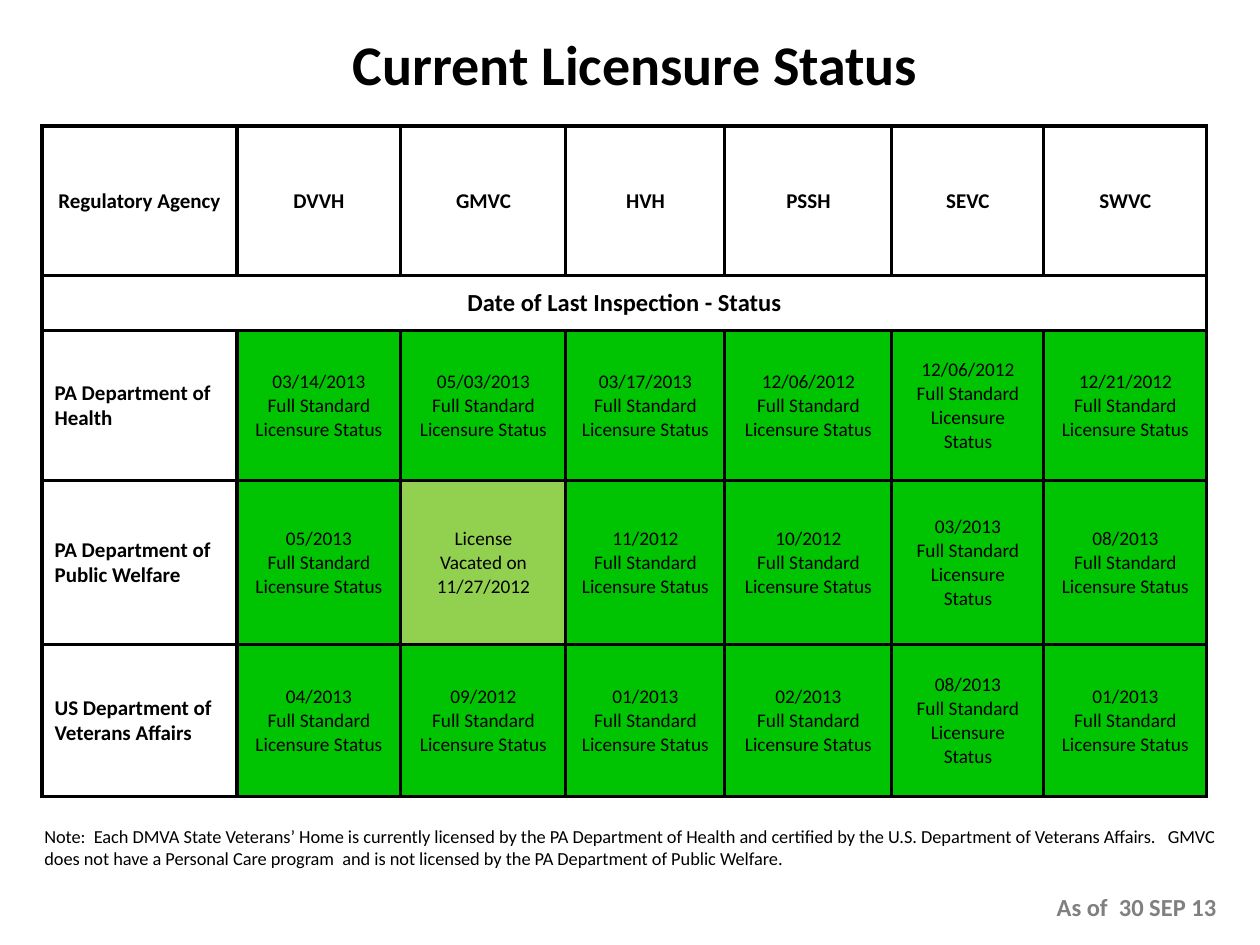
from lxml import etree
from pptx import Presentation
from pptx import util as u
from pptx.dml.color import RGBColor
from pptx.enum import text
from pptx.oxml.ns import qn

BLACK = RGBColor(0x00, 0x00, 0x00)
WHITE = RGBColor(0xFF, 0xFF, 0xFF)
GREY = RGBColor(0x80, 0x80, 0x80)
GREEN = RGBColor(0x00, 0xC3, 0x02)
LIME = RGBColor(0x92, 0xD0, 0x50)
LEFT, CENTER, RIGHT = text.PP_ALIGN.LEFT, text.PP_ALIGN.CENTER, text.PP_ALIGN.RIGHT

PX_PER_INCH = 126
HOMES = ["DVVH", "GMVC", "HVH", "PSSH", "SEVC", "SWVC"]
STATUS = "Full Standard Licensure Status"
VACATED = "License\nVacated on 11/27/2012"
INSPECTIONS = {
    "PA Department of Health":
        ["03/14/2013", "05/03/2013", "03/17/2013", "12/06/2012", "12/06/2012", "12/21/2012"],
    "PA Department of Public Welfare":
        ["05/2013", None, "11/2012", "10/2012", "03/2013", "08/2013"],
    "US Department of Veterans Affairs":
        ["04/2013", "09/2012", "01/2013", "02/2013", "08/2013", "01/2013"],
}
NOTE = ("Note:  Each DMVA State Veterans’ Home is currently licensed by the PA Department of Health "
        "and certified by the U.S. Department of Veterans Affairs.   GMVC does not have a Personal "
        "Care program  and is not licensed by the PA Department of Public Welfare.")


def px(length):
    return u.Emu(round(length * 914400 / PX_PER_INCH))


def write(paragraph, words, size=11, bold=False, color=BLACK, align=LEFT, before=0, font="Calibri"):
    paragraph.alignment = align
    paragraph.space_before = u.Pt(before)
    run = paragraph.add_run()
    run.text = words
    run.font.name = font
    run.font.size = u.Pt(size)
    run.font.bold = bold
    run.font.color.rgb = color


class Deck:
    def __init__(self, width, height):
        self.prs = Presentation()
        self.prs.slide_width, self.prs.slide_height = px(width), px(height)
        self.slide = self.prs.slides.add_slide(self.prs.slide_layouts[6])

    def textbox(self, left, top, width, height, anchor=text.MSO_ANCHOR.TOP):
        frame = self.slide.shapes.add_textbox(px(left), px(top), px(width), px(height)).text_frame
        frame.word_wrap = True
        frame.vertical_anchor = anchor
        return frame

    def table(self, left, top, widths, heights):
        grid = self.slide.shapes.add_table(len(heights), len(widths), px(left), px(top),
                                           px(sum(widths)), px(sum(heights))).table
        grid.first_row = grid.horz_banding = False
        for column, width in zip(grid.columns, widths):
            column.width = px(width)
        for row, height in zip(grid.rows, heights):
            row.height = px(height)
        for cell in grid.iter_cells():
            self.border(cell)
            self.fill(cell, WHITE)
        return grid

    def border(self, cell, points=2):
        properties = cell._tc.get_or_add_tcPr()
        for side in ("a:lnL", "a:lnR", "a:lnT", "a:lnB"):
            line = etree.SubElement(properties, qn(side), w=str(u.Pt(points)))
            solid = etree.SubElement(line, qn("a:solidFill"))
            etree.SubElement(solid, qn("a:srgbClr"), val=str(BLACK))

    def fill(self, cell, color):
        cell.fill.solid()
        cell.fill.fore_color.rgb = color

    def cell(self, cell, words, color=WHITE, **style):
        self.fill(cell, color)
        cell.vertical_anchor = text.MSO_ANCHOR.MIDDLE
        frame = cell.text_frame
        for number, line in enumerate(words.split("\n")):
            write(frame.add_paragraph() if number else frame.paragraphs[0], line, **style)


def main():
    deck = Deck(1260, 945)
    title = deck.textbox(231, 21, 809, 84, text.MSO_ANCHOR.MIDDLE)
    write(title.paragraphs[0], "Current Licensure Status", size=32, bold=True, align=CENTER)

    licensure = deck.table(42, 126, [195, 164, 165, 159, 167, 152, 163], [150, 55, 150, 164, 152])
    for column, heading in enumerate(["Regulatory Agency"] + HOMES):
        deck.cell(licensure.cell(0, column), heading, size=12, bold=True, align=CENTER)
    licensure.cell(1, 0).merge(licensure.cell(1, len(HOMES)))
    deck.cell(licensure.cell(1, 0), "Date of Last Inspection - Status",
              size=14, bold=True, align=CENTER)
    for row, (agency, dates) in enumerate(INSPECTIONS.items(), start=2):
        deck.cell(licensure.cell(row, 0), agency, size=12, bold=True)
        for column, date in enumerate(dates, start=1):
            result = f"{date}\n{STATUS}" if date else VACATED
            deck.cell(licensure.cell(row, column), result, GREEN if date else LIME, align=CENTER)

    footer = deck.textbox(32, 819, 1197, 110)
    write(footer.paragraphs[0], NOTE, size=10.5)
    write(footer.add_paragraph(), "As of  30 SEP 13", size=14, bold=True, color=GREY,
          align=RIGHT, before=13)

    deck.prs.save("out.pptx")


if __name__ == "__main__":
    main()
